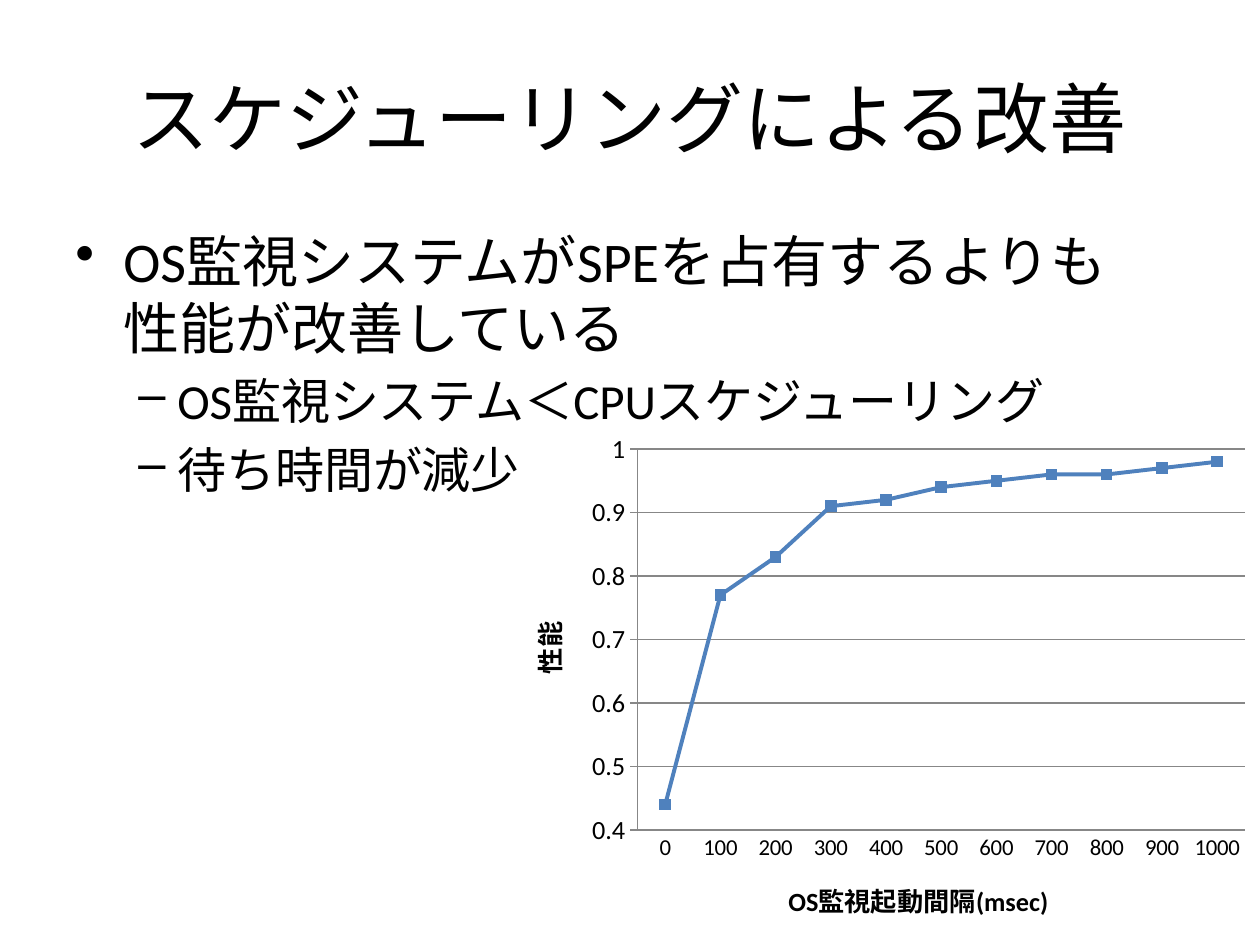
from lxml.etree import SubElement
from pptx import Presentation
from pptx.chart.data import CategoryChartData
from pptx.dml.color import RGBColor
from pptx.enum.chart import XL_CHART_TYPE as ChartType, XL_MARKER_STYLE as Marker
from pptx.enum.chart import XL_TICK_MARK as Tick
from pptx.enum.text import MSO_ANCHOR as Anchor, PP_ALIGN as Align
from pptx.oxml import parse_xml
from pptx.oxml.ns import nsdecls, qn
from pptx.util import Emu, Pt

PX = 914400 / 126
FONT = "Calibri"
COLORS = {"text": "000000", "series": "4F81BD", "grid": "878787"}
BULLETS = [("•", 48, 48), ("–", 102, 39)]
PERFORMANCE = [0.44, 0.77, 0.83, 0.91, 0.92, 0.94, 0.95, 0.96, 0.96, 0.97, 0.98]


def px(n):
    return Emu(round(n * PX))


def color(name):
    return RGBColor.from_string(COLORS[name])


def style_font(font, size, bold=False):
    font.name = FONT
    font.size = Pt(size)
    font.bold = bold
    font.color.rgb = color("text")


def add_run(p, text, size, bold=False):
    r = p.add_run()
    r.text = text
    style_font(r.font, size, bold)


def add_box(slide, x, y, w, h, anchor):
    tf = slide.shapes.add_textbox(px(x), px(y), px(w), px(h)).text_frame
    tf.word_wrap = True
    tf.vertical_anchor = anchor
    return tf


def add_title(slide, text):
    p = add_box(slide, 63, 38, 1134, 158, Anchor.MIDDLE).paragraphs[0]
    p.alignment = Align.CENTER
    add_run(p, text, 44)


def add_bullets(slide, items):
    tf = add_box(slide, 63, 220, 1134, 624, Anchor.TOP)
    for i, (level, size, lines) in enumerate(items):
        p = tf.add_paragraph() if i else tf.paragraphs[0]
        p.level = level
        p.space_before = Pt(size * 0.2)
        char, margin, hang = BULLETS[level]
        pPr = p._p.get_or_add_pPr()
        pPr.set("marL", str(px(margin)))
        pPr.set("indent", str(-px(hang)))
        SubElement(pPr, qn("a:buChar")).set("char", char)
        for n, line in enumerate(lines):
            if n:
                p.add_line_break()
            add_run(p, line, size)


def style_axis(axis, title, size, tick):
    tf = axis.axis_title.text_frame
    add_run(tf.paragraphs[0], title, 15, True)
    axis.major_tick_mark = tick
    axis.minor_tick_mark = Tick.NONE
    style_font(axis.tick_labels.font, size)
    axis.format.line.color.rgb = color("grid")
    return tf


def set_plot_layout(chart, **fractions):
    area = chart._chartSpace.chart.plotArea
    for old in area.findall(qn("c:layout")):
        area.remove(old)
    modes = '<c:layoutTarget val="inner"/><c:xMode val="edge"/><c:yMode val="edge"/>'
    sizes = "".join(f'<c:{k} val="{v}"/>' for k, v in fractions.items())
    area.insert(0, parse_xml(
        f'<c:layout {nsdecls("c")}><c:manualLayout>{modes}{sizes}</c:manualLayout></c:layout>'))


def add_performance_chart(slide):
    data = CategoryChartData()
    data.categories = [str(100 * i) for i in range(len(PERFORMANCE))]
    data.add_series("Series 1", PERFORMANCE)
    chart = slide.shapes.add_chart(
        ChartType.LINE_MARKERS, px(501), px(423), px(759), px(522), data).chart
    chart.has_legend = False
    chart.has_title = False
    style_font(chart.font, 10)
    set_plot_layout(chart, x=0.18, y=0.05, w=0.8, h=0.73)

    style_axis(chart.category_axis, "OS監視起動間隔(msec)", 13, Tick.NONE)
    axis = chart.value_axis
    title = style_axis(axis, "性能", 15, Tick.OUTSIDE)
    title._txBody.bodyPr.set("rot", "-5400000")
    title._txBody.bodyPr.set("vert", "horz")
    axis.minimum_scale, axis.maximum_scale, axis.major_unit = 0.4, 1, 0.1
    axis.tick_labels.number_format = "General"
    axis.tick_labels.number_format_is_linked = False
    axis.major_gridlines.format.line.color.rgb = color("grid")

    plot = chart.plots[0]
    plot.vary_by_categories = False
    s = plot.series[0]
    s.smooth = False
    s.format.line.width = Pt(2.25)
    s.format.line.color.rgb = color("series")
    s.marker.style = Marker.SQUARE
    s.marker.size = 6
    s.marker.format.fill.solid()
    s.marker.format.fill.fore_color.rgb = color("series")
    s.marker.format.line.color.rgb = color("series")


def main():
    prs = Presentation()
    prs.slide_width, prs.slide_height = px(1260), px(945)
    slide = prs.slides.add_slide(prs.slide_layouts[6])
    add_title(slide, "スケジューリングによる改善")
    add_bullets(slide, [
        (0, 32, ["OS監視システムがSPEを占有するよりも", "性能が改善している"]),
        (1, 28, ["OS監視システム＜CPUスケジューリング"]),
        (1, 28, ["待ち時間が減少"]),
    ])
    add_performance_chart(slide)
    prs.save("out.pptx")


if __name__ == "__main__":
    main()
